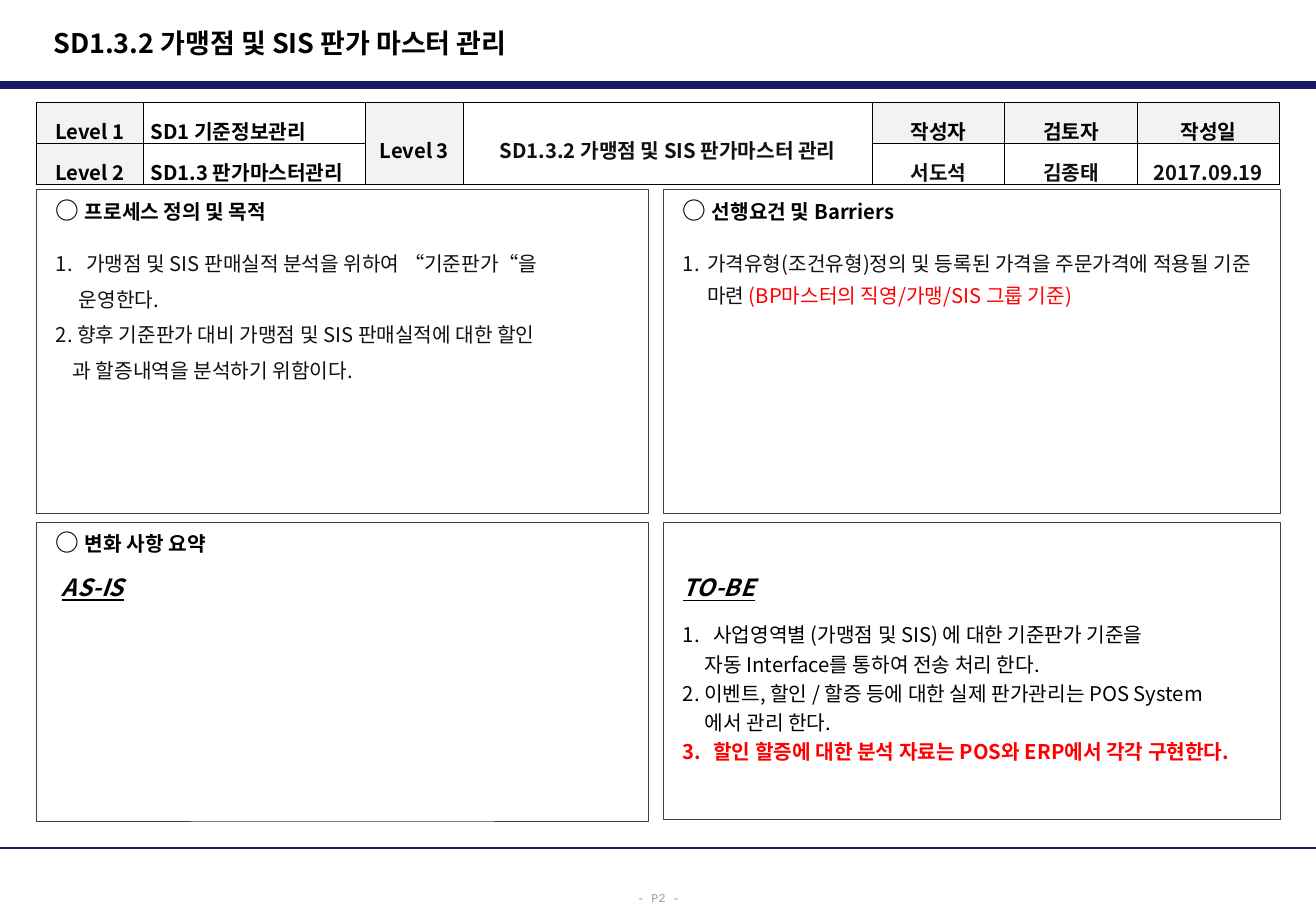
from pptx import Presentation
from pptx.dml.color import RGBColor
from pptx.enum.shapes import MSO_CONNECTOR, MSO_SHAPE
from pptx.enum.text import MSO_ANCHOR, PP_ALIGN
from pptx.oxml.ns import qn
from pptx.util import Inches, Pt
from lxml.etree import SubElement

NAVY = RGBColor(0x19, 0x19, 0x66)
BLACK = RGBColor(0, 0, 0)
INK = RGBColor(0x11, 0x11, 0x11)
RED = RGBColor(0xFF, 0, 0)
GRAY = RGBColor(0x96, 0x96, 0x96)
FRAME = RGBColor(0x40, 0x40, 0x40)
HEADER = RGBColor(0xF2, 0xF2, 0xF2)
WHITE = RGBColor(0xFF, 0xFF, 0xFF)
FONT = "Noto Sans CJK KR"
GAP = 9.6


def add_run(p, text, size=12, color=BLACK, bold=False, italic=False,
            underline=False, font=FONT):
    r = p.add_run()
    r.text = text
    f = r.font
    f.size, f.name, f.bold, f.italic, f.underline = Pt(size), font, bold, italic, underline
    f.color.rgb = color
    SubElement(r._r.get_or_add_rPr(), qn("a:ea"), typeface=font)


def add_text(tf, text, align=PP_ALIGN.LEFT, spacing=1.0, before=0, indent=0,
             number=None, **fmt):
    p = tf.paragraphs[0]
    if p.runs:
        p = tf.add_paragraph()
    pPr = p._p.get_or_add_pPr()
    pPr.set("marL", str(Inches(indent)))
    pPr.set("indent", str(-Inches(indent) if number else 0))
    if number:
        SubElement(pPr, qn("a:buFont"), typeface="+mj-lt")
        SubElement(pPr, qn("a:buAutoNum"), type="arabicPeriod", startAt=str(number))
    p.alignment, p.line_spacing, p.space_before = align, spacing, Pt(before)
    add_run(p, text, **fmt)
    return p


def add_rule(s, y, width):
    line = s.shapes.add_connector(MSO_CONNECTOR.STRAIGHT, 0, Inches(y),
                                  Inches(10.83), Inches(y))
    line.line.color.rgb = NAVY
    line.line.width = Pt(width)
    SubElement(line._element.spPr, qn("a:effectLst"))


def add_box(s, x, y, w, h, anchor=MSO_ANCHOR.MIDDLE, wrap=True):
    tf = s.shapes.add_textbox(Inches(x), Inches(y), Inches(w), Inches(h)).text_frame
    tf.word_wrap, tf.vertical_anchor = wrap, anchor
    return tf


def add_panel(s, x, y, w, h, heading=None, top=0.05):
    sp = s.shapes.add_shape(MSO_SHAPE.RECTANGLE, Inches(x), Inches(y),
                            Inches(w), Inches(h))
    sp.shadow.inherit = False
    sp.fill.background()
    sp.line.color.rgb = FRAME
    sp.line.width = Pt(0.5)
    tf = sp.text_frame
    tf.word_wrap, tf.vertical_anchor = True, MSO_ANCHOR.TOP
    tf.margin_left, tf.margin_right = Inches(0.16), Inches(0.1)
    tf.margin_top, tf.margin_bottom = Inches(top), Inches(0.05)
    if heading:
        add_run(add_text(tf, "○ ", size=14, bold=True), heading, bold=True)
    return tf


def add_cell(cell, text, header=False, align=PP_ALIGN.CENTER, color=BLACK):
    cell.fill.solid()
    cell.fill.fore_color.rgb = HEADER if header else WHITE
    cell.vertical_anchor = MSO_ANCHOR.MIDDLE
    cell.margin_left = cell.margin_right = Inches(0.06)
    cell.margin_top, cell.margin_bottom = Inches(0.04), Inches(0.01)
    if text:
        add_text(cell.text_frame, text, align=align, spacing=1.3, bold=True, color=color)
    tcPr = cell._tc.get_or_add_tcPr()
    for i, side in enumerate(("lnL", "lnR", "lnT", "lnB")):
        ln = tcPr.makeelement(qn(f"a:{side}"), {"w": str(Pt(0.5))})
        tcPr.insert(i, ln)
        SubElement(SubElement(ln, qn("a:solidFill")), qn("a:srgbClr"), val=str(BLACK))


def add_process_table(s, x, y, w, h):
    rows = [
        ["Level 1", "SD1 기준정보관리", "Level 3", "SD1.3.2 가맹점 및 SIS 판가마스터 관리",
         "작성자", "검토자", "작성일"],
        ["Level 2", "SD1.3 판가마스터관리", "", "", "서도석", "김종태", "2017.09.19"],
    ]
    widths = [0.88, 1.83, 0.8, 3.37, 1.09, 1.09, 1.17]
    table = s.shapes.add_table(2, 7, Inches(x), Inches(y), Inches(w), Inches(h)).table
    for col, width in zip(table.columns, widths):
        col.width = Inches(width)
    for i, row in enumerate(rows):
        table.rows[i].height = Inches(h / 2)
        for j, text in enumerate(row):
            header = j in (0, 2) or (i == 0 and j > 3)
            add_cell(table.cell(i, j), text, header,
                     PP_ALIGN.LEFT if j == 1 else PP_ALIGN.CENTER,
                     INK if j > 2 and not header else BLACK)
    for j in (2, 3):
        table.cell(0, j).merge(table.cell(1, j))


def add_purpose(s, *box):
    tf = add_panel(s, *box, heading="프로세스 정의 및 목적")
    fmt = dict(spacing=1.3, color=INK)
    add_text(tf, "가맹점 및 SIS 판매실적 분석을 위하여 “기준판가“을", number=1,
             indent=0.25, before=GAP + 2.4, **fmt)
    add_text(tf, "운영한다.", indent=0.19, before=2.4, **fmt)
    add_text(tf, "2. 향후 기준판가 대비 가맹점 및 SIS 판매실적에 대한 할인", before=2.4, **fmt)
    add_text(tf, "과 할증내역을 분석하기 위함이다.", indent=0.14, before=2.4, **fmt)


def add_barriers(s, *box):
    tf = add_panel(s, *box, heading="선행요건 및 Barriers")
    p = add_text(tf, "가격유형(조건유형)정의 및 등록된 가격을 주문가격에 적용될 기준 마련 ",
                 number=1, indent=0.2, before=GAP + 2.4, spacing=1.3, color=INK)
    add_run(p, "(BP마스터의 직영/가맹/SIS 그룹 기준)", color=RED)


def add_as_is(s, *box):
    tf = add_panel(s, *box, heading="변화 사항 요약")
    add_text(tf, "AS-IS", indent=0.05, before=GAP, size=14, bold=True,
             italic=True, underline=True)


def add_to_be(s, *box):
    tf = add_panel(s, *box, top=0.42)
    add_text(tf, "TO-BE", size=14, bold=True, italic=True, underline=True)
    add_text(tf, "사업영역별 (가맹점 및 SIS) 에 대한 기준판가 기준을", number=1,
             indent=0.25, before=GAP, spacing=1.2)
    add_text(tf, "자동 Interface를 통하여 전송 처리 한다.", indent=0.18, spacing=1.2)
    add_text(tf, "2. 이벤트, 할인 / 할증 등에 대한 실제 판가관리는 POS System", spacing=1.2)
    add_text(tf, "에서 관리 한다.", indent=0.18, spacing=1.2)
    add_text(tf, "할인 할증에 대한 분석 자료는 POS와 ERP에서 각각 구현한다.", number=3,
             indent=0.25, spacing=1.2, color=RED, bold=True)


def main():
    prs = Presentation()
    prs.slide_width, prs.slide_height = Inches(10.83), Inches(7.5)
    s = prs.slides.add_slide(prs.slide_layouts[6])
    add_rule(s, 0.7, 4.5)
    add_rule(s, 6.98, 1.5)
    add_text(add_box(s, 5.14, 7.25, 0.56, 0.25, MSO_ANCHOR.TOP, False), "- P2 -",
             align=PP_ALIGN.CENTER, spacing=1.3, size=7, color=GRAY, font="Courier New")
    add_text(add_box(s, 0.34, 0.16, 7.11, 0.38),
             "SD1.3.2 가맹점 및 SIS 판가 마스터 관리", size=16, bold=True)
    add_process_table(s, 0.3, 0.84, 10.23, 0.68)
    add_purpose(s, 0.3, 1.56, 5.04, 2.67)
    add_barriers(s, 5.46, 1.56, 5.08, 2.67)
    add_as_is(s, 0.3, 4.3, 5.04, 2.46)
    add_to_be(s, 5.46, 4.3, 5.08, 2.45)
    prs.save("out.pptx")


if __name__ == "__main__":
    main()
